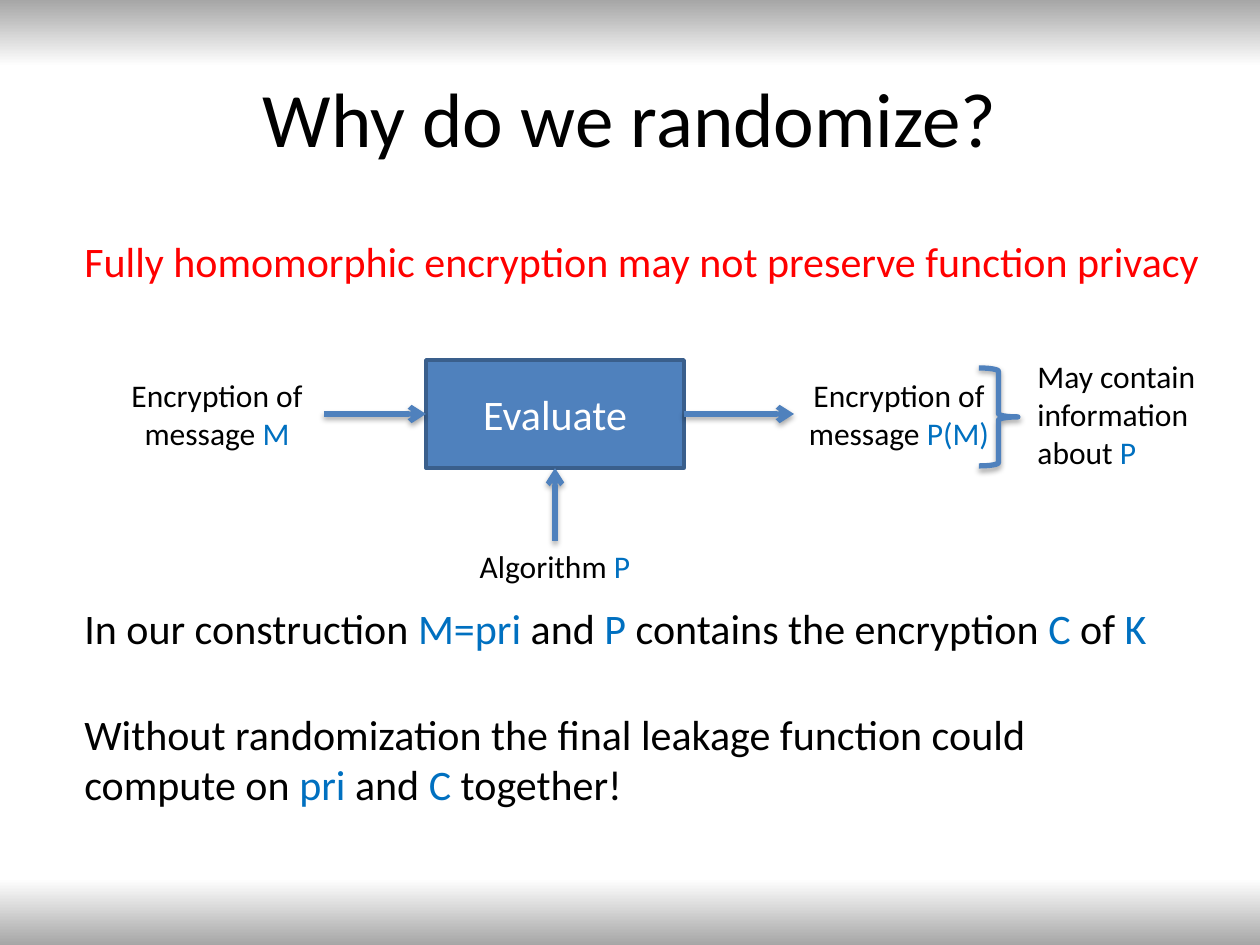
from lxml import etree
from pptx import Presentation
from pptx import util as u
from pptx.dml.color import RGBColor
from pptx.enum import shapes, text
from pptx.oxml import ns

SCALE = u.Inches(1) / 126
FONT = "Calibri"
COLORS = {
    "black": "000000", "white": "FFFFFF", "gray": "A6A6A6", "red": "FF0000",
    "symbol": "0070C0", "blue": "4F81BD", "edge": "3A5F8C",
}
GRADIENT = [(0, "gray"), (7, "white"), (93, "white"), (100, "gray")]
LEFT, CENTER = text.PP_ALIGN.LEFT, text.PP_ALIGN.CENTER


def px(*lengths):
    return [u.Emu(round(length * SCALE)) for length in lengths]


def rgb(name):
    return RGBColor.from_string(COLORS[name])


def add_child(parent, tag, **attributes):
    child = etree.SubElement(parent, ns.qn(tag))
    for name, value in attributes.items():
        child.set(name, str(value))
    return child


def add_shadow(element):
    """Give a shape or connector a soft shadow below it."""
    properties = element.spPr
    effects = properties.find(ns.qn("a:effectLst"))
    if effects is None:
        effects = add_child(properties, "a:effectLst")
    shadow = add_child(effects, "a:outerShdw", blurRad=40000, dist=23000,
                       dir=5400000, rotWithShape=0)
    color = add_child(shadow, "a:srgbClr", val=COLORS["black"])
    add_child(color, "a:alpha", val=35000)


def set_background(page):
    fill = page.background.fill
    fill.gradient()
    fill.gradient_angle = 270
    stops = page.background._cSld.find(".//" + ns.qn("a:gsLst"))
    for stop in list(stops):
        stops.remove(stop)
    for percent, name in GRADIENT:
        stop = add_child(stops, "a:gs", pos=percent * 1000)
        add_child(stop, "a:srgbClr", val=COLORS[name])


def write(frame, paragraphs, size, align, color="black"):
    """Fill a frame; every second run of a paragraph is a symbol."""
    for index, runs in enumerate(paragraphs):
        para = frame.paragraphs[0] if index == 0 else frame.add_paragraph()
        para.alignment = align
        for position, words in enumerate(runs):
            span = para.add_run()
            span.text = words
            span.font.name = FONT
            span.font.size = u.Pt(size)
            span.font.color.rgb = rgb("symbol" if position % 2 else color)


def add_title(page, words):
    title = page.shapes.title
    title.left, title.top, title.width, title.height = px(63, 38, 1134, 157)
    title.text_frame.vertical_anchor = text.MSO_ANCHOR.MIDDLE
    write(title.text_frame, [[words]], 44, CENTER)


def add_label(page, place, paragraphs, size=18, align=CENTER, color="black",
              wrap=True):
    box = page.shapes.add_textbox(*px(*place))
    box.text_frame.word_wrap = wrap
    box.text_frame.auto_size = text.MSO_AUTO_SIZE.SHAPE_TO_FIT_TEXT
    write(box.text_frame, paragraphs, size, align, color)


def add_process(page, place, words):
    box = page.shapes.add_shape(shapes.MSO_SHAPE.RECTANGLE, *px(*place))
    box.shadow.inherit = False
    box.fill.solid()
    box.fill.fore_color.rgb = rgb("blue")
    box.line.color.rgb = rgb("edge")
    box.line.width = u.Pt(2)
    box.text_frame.vertical_anchor = text.MSO_ANCHOR.MIDDLE
    write(box.text_frame, [[words]], 24, CENTER, "white")
    return box


def add_arrow(page, start, end):
    arrow = page.shapes.add_connector(shapes.MSO_CONNECTOR.STRAIGHT,
                                      *px(*start, *end))
    arrow.line.color.rgb = rgb("blue")
    arrow.line.width = u.Pt(3)
    add_child(arrow.line._get_or_add_ln(), "a:tailEnd", type="arrow")
    add_shadow(arrow._element)
    return arrow


def add_brace(page, place):
    brace = page.shapes.add_shape(shapes.MSO_SHAPE.RIGHT_BRACE, *px(*place))
    brace.fill.background()
    brace.line.color.rgb = rgb("blue")
    brace.line.width = u.Pt(3)
    brace.shadow.inherit = False
    add_shadow(brace._element)


def add_diagram(page):
    evaluate = add_process(page, (426, 360, 258, 108), "Evaluate")
    add_label(page, (112, 370, 210, 89), [["Encryption of message ", "M"]])
    add_arrow(page, (324, 414), (426, 414)).end_connect(evaluate, 1)
    add_arrow(page, (555, 541), (555, 468)).end_connect(evaluate, 2)
    add_label(page, (450, 541, 210, 50), [["Algorithm ", "P"]])
    add_arrow(page, (684, 414), (794, 414)).begin_connect(evaluate, 3)
    add_label(page, (794, 370, 210, 89), [["Encryption of message ", "P(M)"]])
    add_brace(page, (979, 368, 39, 98))
    add_label(page, (1025, 351, 185, 127),
              [["May contain"], ["information"], ["about ", "P"]],
              align=LEFT, wrap=False)


def main():
    deck = Presentation()
    deck.slide_width, deck.slide_height = px(1260, 945)
    page = deck.slides.add_slide(deck.slide_layouts[5])
    set_background(page)
    add_title(page, "Why do we randomize?")
    add_label(page, (72, 229, 1152, 64),
              [["Fully homomorphic encryption may not preserve function privacy"]],
              24, LEFT, "red", wrap=False)
    add_diagram(page)
    add_label(page, (72, 596, 1097, 64),
              [["In our construction ", "M=pri", " and ", "P",
                " contains the encryption ", "C", " of ", "K"]],
              24, LEFT, wrap=False)
    add_label(page, (72, 702, 1097, 115),
              [["Without randomization the final leakage function could compute on ",
                "pri", " and ", "C", " together!"]], 24, LEFT)
    deck.save("out.pptx")


if __name__ == "__main__":
    main()
